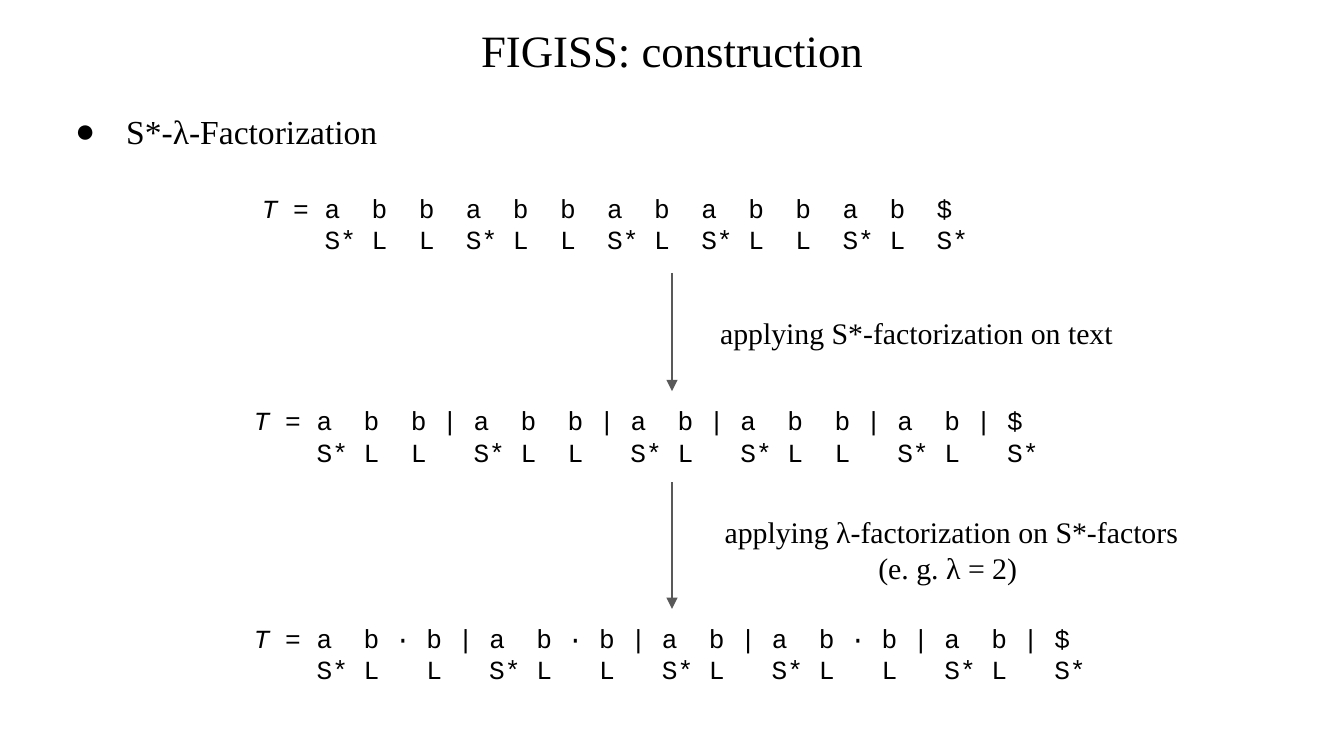
from dataclasses import dataclass

from lxml.etree import SubElement
from pptx import Presentation
from pptx.dml.color import RGBColor
from pptx.enum.shapes import MSO_CONNECTOR as Connector
from pptx.enum.text import MSO_ANCHOR as Anchor, MSO_AUTO_SIZE as AutoSize, PP_ALIGN as Align
from pptx.oxml.ns import qn
from pptx.shapes.autoshape import Shape
from pptx.shapes.shapetree import GroupShapes, SlideShapes
from pptx.text.text import _Paragraph as Paragraph
from pptx.util import Emu, Pt

BLACK = RGBColor(0x00, 0x00, 0x00)
GREY = RGBColor(0x59, 0x59, 0x59)
SERIF = "Times New Roman"
MONO = "Courier New"
TOP, BOTTOM = 0, 2  # connection sites
SLIDE_WIDTH = 1000
ARROW_X = SLIDE_WIDTH // 2


def px(length: int) -> Emu:
    """100 px to the inch."""
    return Emu(length * 9144)


@dataclass(frozen=True)
class Box:
    left: int
    top: int
    width: int
    height: int


@dataclass(frozen=True)
class Factorization:
    box: Box
    text: str


@dataclass(frozen=True)
class Step:
    arrow_top: int
    arrow_bottom: int
    box: Box
    caption: str


FACTORIZATIONS = [
    Factorization(Box(185, 133, 683, 67), "a  b  b  a  b  b  a  b  a  b  b  a  b  $"),
    Factorization(Box(179, 291, 642, 68), "a  b  b | a  b  b | a  b | a  b  b | a  b | $"),
    Factorization(Box(179, 453, 642, 67), "a  b · b | a  b · b | a  b | a  b · b | a  b | $"),
]
STEPS = [
    Step(203, 291, Box(509, 224, 346, 47), "applying S*-factorization on text"),
    Step(359, 453, Box(508, 372, 400, 74),
         "applying λ-factorization on S*-factors\n(e. g. λ = 2) "),
]


def add_text(shapes: SlideShapes | GroupShapes, box: Box, text: str) -> Shape:
    text_box = shapes.add_textbox(px(box.left), px(box.top), px(box.width), px(box.height))
    frame = text_box.text_frame
    frame.word_wrap = True
    frame.vertical_anchor = Anchor.TOP
    frame.margin_left = frame.margin_right = frame.margin_top = frame.margin_bottom = px(10)
    frame.text = text
    return text_box


def style_runs(paragraph: Paragraph, font_name: str, size: int) -> None:
    for run in paragraph.runs:
        run.font.name = font_name
        run.font.size = Pt(size)
        run.font.color.rgb = BLACK


def add_bullet(paragraph: Paragraph) -> None:
    properties = paragraph._p.get_or_add_pPr()
    properties.set("marL", str(px(50)))
    properties.set("indent", str(px(-38)))
    colour = SubElement(properties, qn("a:buClr"))
    SubElement(colour, qn("a:srgbClr"), val=str(BLACK))
    SubElement(properties, qn("a:buFont"), typeface=SERIF)
    SubElement(properties, qn("a:buChar"), char="●")


def suffix_types(text: str) -> str:
    """Type of each letter, set under it: a and $ are S*, b is L."""
    types = text.replace("a ", "S*").replace("$", "S*").replace("b", "L")
    return types.replace("|", " ").replace("·", " ")


def add_factorization(shapes: SlideShapes, factorization: Factorization) -> Shape:
    symbol, equals = "T", " = "
    prefix = " " * len(symbol + equals)
    text_box = add_text(shapes, factorization.box,
                        f"{symbol}\n{prefix}{suffix_types(factorization.text)}")
    text_box.text_frame.auto_size = AutoSize.SHAPE_TO_FIT_TEXT
    letters, types = text_box.text_frame.paragraphs
    letters.runs[0].font.italic = True
    letters.add_run().text = equals + factorization.text
    for paragraph in (letters, types):
        style_runs(paragraph, MONO, 14)
    return text_box


def add_step(shapes: SlideShapes, step: Step, source: Shape, target: Shape) -> None:
    """Arrow and caption, joined where the arrow is centred on a box."""
    group = shapes.add_group_shape().shapes
    arrow = group.add_connector(Connector.STRAIGHT, px(ARROW_X), px(step.arrow_top),
                                px(ARROW_X), px(step.arrow_bottom))
    if source.left + source.width // 2 == px(ARROW_X):
        arrow.begin_connect(source, BOTTOM)
    arrow.end_connect(target, TOP)
    arrow.line.color.rgb = GREY
    arrow.line.width = Pt(0.75)
    SubElement(arrow.line._get_or_add_ln(), qn("a:tailEnd"), type="triangle")
    SubElement(arrow._element.spPr, qn("a:effectLst"))

    caption = add_text(group, step.box, step.caption).text_frame
    caption.auto_size = AutoSize.SHAPE_TO_FIT_TEXT
    for paragraph in caption.paragraphs:
        paragraph.alignment = Align.CENTER
        style_runs(paragraph, SERIF, 16)


def main() -> None:
    presentation = Presentation()
    presentation.slide_width = px(SLIDE_WIDTH)
    presentation.slide_height = px(SLIDE_WIDTH) * 9 // 16
    shapes = presentation.slides.add_slide(presentation.slide_layouts[6]).shapes

    topic = add_text(shapes, Box(34, 68, 932, 63), "S*-λ-Factorization").text_frame.paragraphs[0]
    topic.line_spacing = 1.15
    add_bullet(topic)
    style_runs(topic, SERIF, 18)

    title = add_text(shapes, Box(34, 7, 932, 63), "FIGISS: construction").text_frame.paragraphs[0]
    title.alignment = Align.CENTER
    style_runs(title, SERIF, 24)

    stages = [add_factorization(shapes, item) for item in FACTORIZATIONS]
    for step, source, target in zip(STEPS, stages, stages[1:]):
        add_step(shapes, step, source, target)

    presentation.save("out.pptx")


if __name__ == "__main__":
    main()
